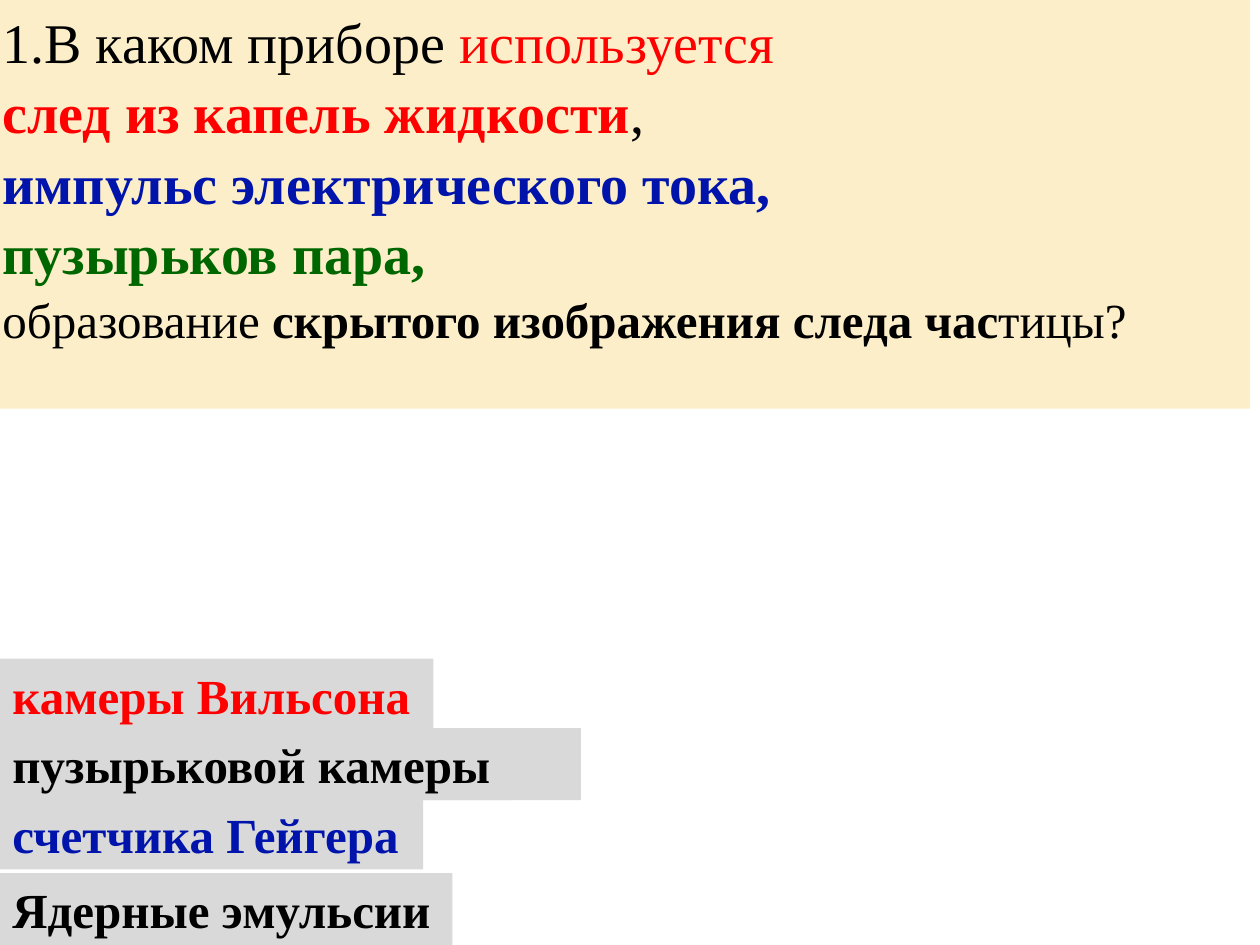
"""Build a quiz slide on particle detectors: a question and its answer labels."""
from pptx import Presentation
from pptx.dml.color import RGBColor
from pptx.enum.shapes import MSO_SHAPE
from pptx.enum.text import MSO_ANCHOR, MSO_AUTO_SIZE, PP_ALIGN
from pptx.util import Cm, Pt

BLACK = RGBColor(0x00, 0x00, 0x00)
RED = RGBColor(0xFF, 0x00, 0x00)
BLUE = RGBColor(0x00, 0x14, 0xAC)
GREEN = RGBColor(0x00, 0x66, 0x00)
CREAM = RGBColor(0xFB, 0xEE, 0xC9)
GREY = RGBColor(0xD9, 0xD9, 0xD9)


def add_run(para, text, size, color, bold):
    span = para.add_run()
    span.text = text
    span.font.name = "Times New Roman"
    span.font.size = Pt(size)
    span.font.bold = bold
    span.font.color.rgb = color


def style_box(box, fill, anchor):
    box.fill.solid()
    box.fill.fore_color.rgb = fill
    box.line.fill.background()
    frame = box.text_frame
    frame.auto_size = MSO_AUTO_SIZE.NONE
    frame.vertical_anchor = anchor
    frame.margin_left = frame.margin_right = Cm(0.25)
    frame.margin_top = frame.margin_bottom = Cm(0.13)
    return frame


deck = Presentation()
deck.slide_width, deck.slide_height = Cm(25.4), Cm(19.05)
page = deck.slides.add_slide(deck.slide_layouts[5])

question = page.shapes.title
question.left, question.top = Cm(-0.2), Cm(-0.05)
question.width, question.height = Cm(25.4), Cm(8.29)
frame = style_box(question, CREAM, MSO_ANCHOR.TOP)
frame.word_wrap = True

question_lines = [
    (32, [("1.В каком приборе ", BLACK, False), ("используется", RED, False)]),
    (32, [("след из капель жидкости", RED, True), (",", BLACK, False)]),
    (32, [("импульс электрического тока,", BLUE, True)]),
    (32, [("пузырьков пара,", GREEN, True)]),
    (28, [("образование ", BLACK, False),
          ("скрытого изображения следа час", BLACK, True),
          ("тицы?", BLACK, False)]),
]
for index, (size, spans) in enumerate(question_lines):
    para = frame.add_paragraph() if index else frame.paragraphs[0]
    para.alignment = PP_ALIGN.LEFT
    para.line_spacing = 1.05
    for text, color, bold in spans:
        add_run(para, text, size, color, bold)

answers = [
    ("пузырьковой камеры", 14.68, 11.71, BLACK),
    ("камеры Вильсона", 13.28, 8.74, RED),
    ("счетчика Гейгера", 16.08, 8.53, BLUE),
    ("пузырьковой камеры", 14.68, 10.31, BLACK),
    ("Ядерные эмульсии", 17.6, 9.12, BLACK),
]
for text, top, width, color in answers:
    box = page.shapes.add_shape(
        MSO_SHAPE.RECTANGLE, Cm(0), Cm(top), Cm(width), Cm(1.45))
    box.shadow.inherit = False
    frame = style_box(box, GREY, MSO_ANCHOR.TOP)
    frame.word_wrap = False
    para = frame.paragraphs[0]
    para.alignment = PP_ALIGN.LEFT
    add_run(para, text, 28, color, True)

deck.save("out.pptx")
